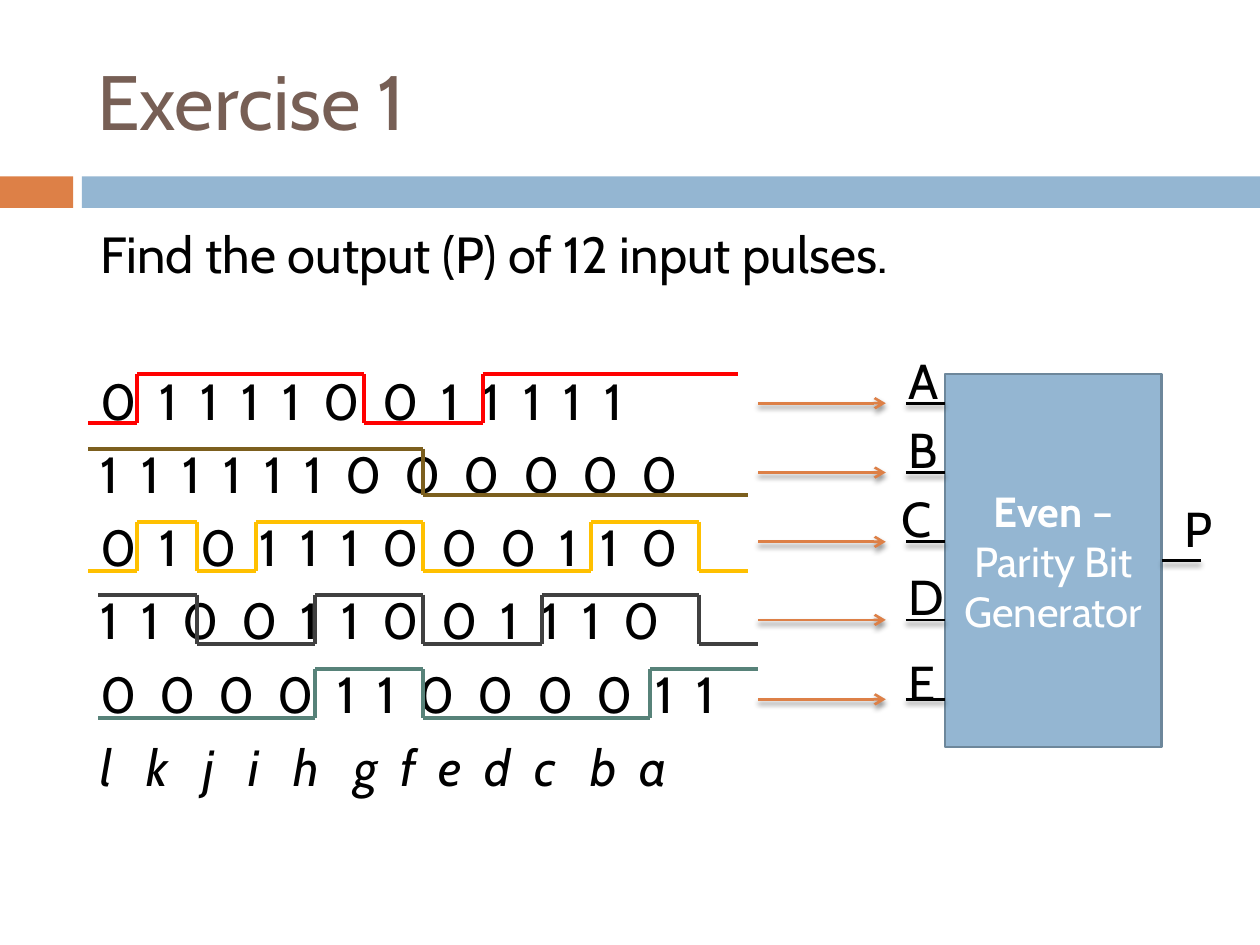
import pptx
import pptx.dml.color
import pptx.enum.shapes
import pptx.enum.text
import pptx.oxml
import pptx.oxml.ns
import pptx.util
from dataclasses import dataclass
from itertools import pairwise
from typing import NamedTuple

Inches = pptx.util.Inches
Pt = pptx.util.Pt
Text = pptx.enum.text


@dataclass(frozen=True)
class Theme:
    font: str = "Cabin"
    title: str = "775F55"
    ink: str = "000000"
    white: str = "FFFFFF"
    blue: str = "94B6D2"
    edge: str = "6D879B"
    orange: str = "DD8047"
    title_size: float = 44
    body_size: float = 29
    label_size: float = 28
    box_size: float = 24
    thin: float = 1.5
    thick: float = 2.25


THEME = Theme()


class Run(NamedTuple):
    text: str
    gap: float = 0  # extra points after each letter
    bold: bool = False
    slant: bool = False


class Row(NamedTuple):
    runs: list[Run]
    before: float = 7


class Input(NamedTuple):
    name: str
    y: float
    left: float
    top: float


class Wave(NamedTuple):
    color: str
    high: float
    low: float
    starts_high: bool
    edges: list[float]


NARROW, WIDE = 3.3, 6.6
BITS = [
    "0 1 1 1 1 0 0 1 1 1 1 1",
    "1 1 1 1 1 1 0 0 0 0 0 0",
    "0 1 0 1 1 1 0 0 0 1 1 0",
    "1 1 0 0 1 1 0 0 1 1 1 0",
    "0 0 0 0 1 1 0 0 0 0 1 1",
]
PULSES = [("l k j i h ", WIDE), ("g f e d ", NARROW), ("c ", WIDE), ("b a", NARROW)]
ROWS = [
    Row([Run("Find the output (P) of 12 input pulses.")]),
    *[Row([Run(bits, NARROW)], 7 if i else 49) for i, bits in enumerate(BITS)],
    Row([Run(text, gap, slant=True) for text, gap in PULSES]),
]
INPUTS = [
    Input("A", 3.2, 7.11, 2.73),
    Input("B", 3.75, 7.11, 3.28),
    Input("C", 4.3, 7.06, 3.83),
    Input("D", 4.92, 7.11, 4.45),
    Input("E", 5.55, 7.11, 5.13),
]
WAVES = [
    Wave("FF0000", 2.97, 3.36, False, [0.7, 1.09, 2.89, 3.83, 5.86]),
    Wave("7C5F1E", 3.56, 3.93, True, [0.7, 3.36, 5.94]),
    Wave("FFC000", 4.14, 4.53, False,
         [0.7, 1.09, 1.56, 2.03, 3.36, 4.69, 5.55, 5.94]),
    Wave("404040", 4.72, 5.11, True,
         [0.78, 1.56, 2.5, 3.36, 4.3, 5.55, 6.02]),
    Wave("578279", 5.31, 5.7, False, [0.78, 2.5, 3.36, 5.16, 6.02]),
]
NS = pptx.oxml.ns.nsdecls("a")
SHADOW = (
    '<a:outerShdw blurRad="38100" dist="30000" dir="5400000" rotWithShape="0">'
    '<a:srgbClr val="000000"><a:alpha val="45000"/></a:srgbClr></a:outerShdw>'
)


def paint(code: str):
    return pptx.dml.color.RGBColor.from_string(code)


def format_all(target, values: dict) -> None:
    for name, value in values.items():
        setattr(target, name, value)


def write(par, run: Run, size: float, color: str) -> None:
    part = par.add_run()
    part.text = run.text
    format_all(part.font, {"name": THEME.font, "size": Pt(size),
                           "bold": run.bold, "italic": run.slant})
    part.font.color.rgb = paint(color)
    if run.gap:
        part._r.get_or_add_rPr().set("spc", str(round(run.gap * 100)))


def add_rect(slide, place: tuple, fill: str, edge: str | None = None):
    rect = slide.shapes.add_shape(
        pptx.enum.shapes.MSO_SHAPE.RECTANGLE, *map(Inches, place))
    rect.shadow.inherit = False
    rect.fill.solid()
    rect.fill.fore_color.rgb = paint(fill)
    if edge:
        rect.line.color.rgb = paint(edge)
        rect.line.width = Pt(THEME.thin)
    else:
        rect.line.fill.background()
    return rect


def add_line(slide, start: tuple, end: tuple, color: str, width: float,
             shadow: bool = False, arrow: bool = False):
    line = slide.shapes.add_connector(
        pptx.enum.shapes.MSO_CONNECTOR.STRAIGHT, *map(Inches, start + end))
    line.line.color.rgb = paint(color)
    line.line.width = Pt(width)
    if arrow:
        line.line._get_or_add_ln().append(
            pptx.oxml.parse_xml(f'<a:tailEnd {NS} type="arrow"/>'))
    effect = SHADOW if shadow else ""
    line._element.spPr.append(
        pptx.oxml.parse_xml(f"<a:effectLst {NS}>{effect}</a:effectLst>"))
    return line


def add_label(slide, text: str, left: float, top: float) -> None:
    box = slide.shapes.add_textbox(*map(Inches, (left, top, 0.44, 0.57)))
    format_all(box.text_frame, {"word_wrap": False,
                                "auto_size": Text.MSO_AUTO_SIZE.SHAPE_TO_FIT_TEXT})
    write(box.text_frame.paragraphs[0], Run(text), THEME.label_size, THEME.ink)


def add_wave(slide, wave: Wave) -> None:
    high = wave.starts_high
    points = []
    for left, right in pairwise(wave.edges):
        y = wave.high if high else wave.low
        points += [(left, y), (right, y)]
        high = not high
    for start, end in pairwise(points):
        add_line(slide, start, end, wave.color, THEME.thick)


def main() -> None:
    deck = pptx.Presentation()
    format_all(deck, {"slide_width": Inches(10), "slide_height": Inches(7.5)})
    slide = deck.slides.add_slide(deck.slide_layouts[5])

    # Title and band
    add_rect(slide, (0, 1.4, 0.58, 0.25), THEME.orange)
    add_rect(slide, (0.65, 1.4, 9.35, 0.25), THEME.blue)
    title = slide.shapes.title
    format_all(title, {"left": Inches(0.67), "top": Inches(0.25),
                       "width": Inches(8.92), "height": Inches(1.08)})
    format_all(title.text_frame, {"vertical_anchor": Text.MSO_ANCHOR.MIDDLE,
                                  "auto_size": Text.MSO_AUTO_SIZE.NONE})
    head = title.text_frame.paragraphs[0]
    head.alignment = Text.PP_ALIGN.LEFT
    write(head, Run("Exercise 1"), THEME.title_size, THEME.title)

    # Task, bit rows and pulse names
    body = slide.shapes.add_textbox(*map(Inches, (0.7, 1.72, 8.92, 4.92)))
    body.text_frame.word_wrap = True
    for i, row in enumerate(ROWS):
        par = body.text_frame.add_paragraph() if i else body.text_frame.paragraphs[0]
        par.space_before = Pt(row.before)
        for run in row.runs:
            write(par, run, THEME.body_size, THEME.ink)

    # Parity box and its output
    box = add_rect(slide, (7.5, 2.97, 1.72, 2.96), THEME.blue, THEME.edge)
    format_all(box.text_frame, {"word_wrap": True,
                                "vertical_anchor": Text.MSO_ANCHOR.MIDDLE})
    par = box.text_frame.paragraphs[0]
    par.alignment = Text.PP_ALIGN.CENTER
    for run in (Run("Even", bold=True), Run(" –Parity Bit Generator")):
        write(par, run, THEME.box_size, THEME.white)
    out = add_line(slide, (9.22, 4.45), (9.53, 4.45), THEME.ink, THEME.thin, True)
    out.begin_connect(box, 3)
    add_label(slide, "P", 9.3, 3.91)

    # Inputs with their arrows
    for pin in INPUTS:
        add_line(slide, (7.19, pin.y), (7.5, pin.y), THEME.ink, THEME.thin, True)
        add_label(slide, pin.name, pin.left, pin.top)
        add_line(slide, (6.02, pin.y), (7.03, pin.y), THEME.orange, THEME.thin,
                 True, arrow=True)

    # Pulse waves
    for wave in WAVES:
        add_wave(slide, wave)

    deck.save("out.pptx")


if __name__ == "__main__":
    main()
